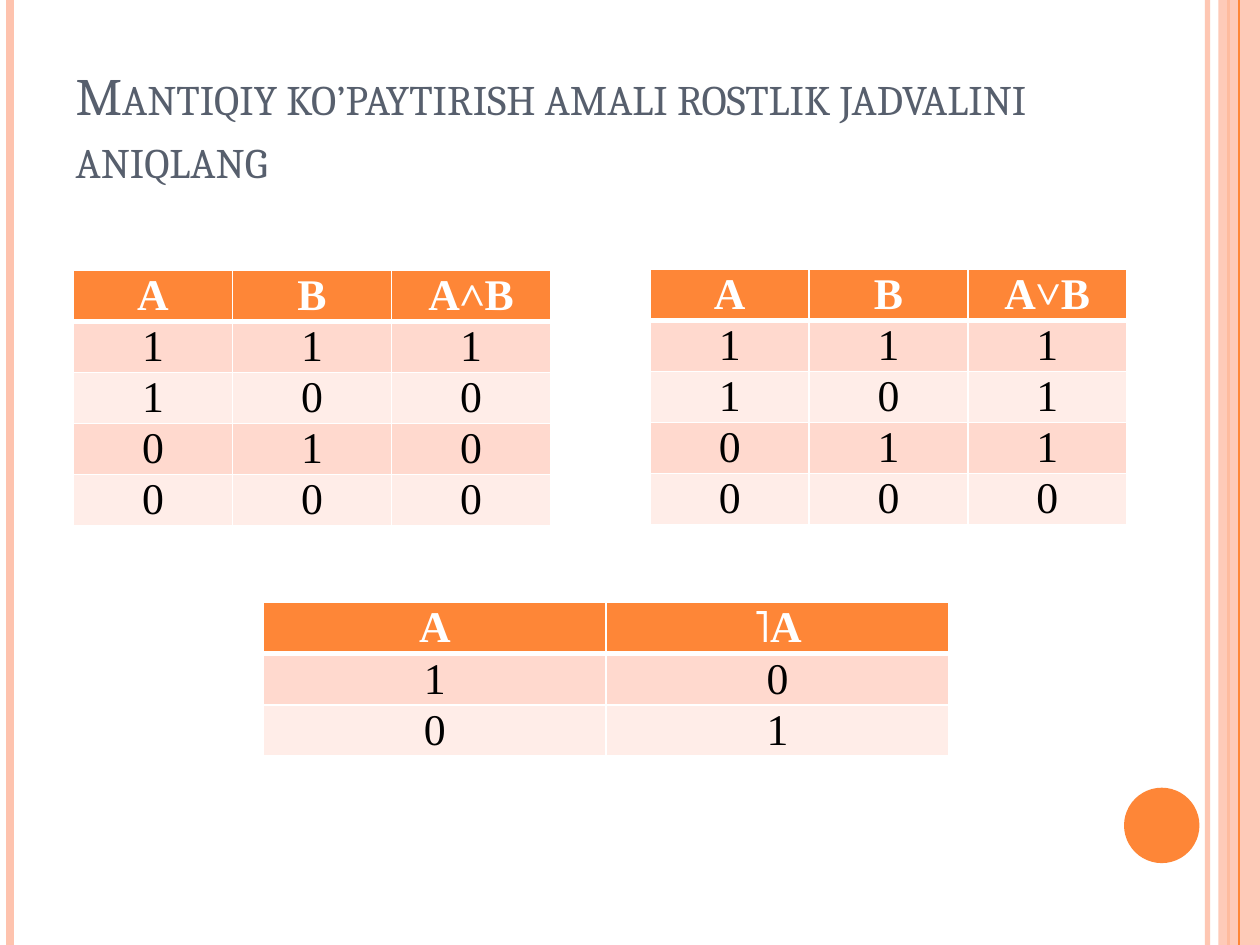
from lxml import etree
from pptx import Presentation
from pptx import util as u
from pptx.dml import color
from pptx.enum import shapes, text
from pptx.oxml import ns

ORANGE, PEACH, WHITE = "FE8637", "FEC3AE", "FFFFFF"
BANDS = ("FFD9CE", "FFEDE8")
ROW_HEIGHT = 1.03
SLIDE_WIDTH, SLIDE_HEIGHT = 25.4, 19.05


def paint(target, hex_color, opacity=100):
    """Give a fill or line format a solid colour with an opacity in percent."""
    fill = getattr(target, "fill", target)
    fill.solid()
    fill.fore_color.rgb = color.RGBColor.from_string(hex_color)
    if opacity < 100:
        for node in fill._xPr.iter(ns.qn("a:srgbClr")):
            etree.SubElement(node, ns.qn("a:alpha"), val=str(opacity * 1000))


def add_run(paragraph, words, font_name, size, hex_color, bold=False):
    """Append one formatted run to a paragraph and return it."""
    run = paragraph.add_run()
    run.text = words
    run.font.name, run.font.size, run.font.bold = font_name, u.Pt(size), bold
    paint(run.font, hex_color)
    return run


def add_bar(slide, x, width, hex_color, opacity=100):
    """Draw a full-height vertical line."""
    bar = slide.shapes.add_connector(
        shapes.MSO_CONNECTOR.STRAIGHT, u.Cm(x), 0, u.Cm(x), u.Cm(SLIDE_HEIGHT))
    bar.line.width = u.Pt(width)
    paint(bar.line, hex_color, opacity)
    etree.SubElement(bar._element.spPr, ns.qn("a:effectLst"))


def add_solid(slide, kind, box, hex_color, opacity=100):
    """Draw a borderless preset shape in a box."""
    shape = slide.shapes.add_shape(kind, *map(u.Cm, box))
    shape.shadow.inherit = False
    shape.line.fill.background()
    paint(shape, hex_color, opacity)


def add_decoration(slide):
    """Draw the side bars and the disc in the corner."""
    add_bar(slide, SLIDE_WIDTH - 1.06, 3, PEACH, 93)
    add_bar(slide, 0.21, 4.5, PEACH)
    add_bar(slide, SLIDE_WIDTH - 0.64, 1.5, ORANGE)
    add_solid(slide, shapes.MSO_SHAPE.RECTANGLE,
              (SLIDE_WIDTH - 0.84, 0, 0.84, SLIDE_HEIGHT), PEACH, 87)
    add_bar(slide, SLIDE_WIDTH - 0.42, 0.75, ORANGE)
    add_solid(slide, shapes.MSO_SHAPE.OVAL, (22.66, 15.88, 1.52, 1.52), ORANGE)


def set_title(slide, words, box):
    """Place the title placeholder in a box and write it in small capitals."""
    title = slide.shapes.title
    title.left, title.top, title.width, title.height = map(u.Cm, box)
    frame = title.text_frame
    frame.word_wrap = True
    frame.vertical_anchor = text.MSO_ANCHOR.BOTTOM
    paragraph = frame.paragraphs[0]
    paragraph.alignment = text.PP_ALIGN.LEFT
    run = add_run(paragraph, words, "Cambria", 30, "575F6D")
    run.font._element.set("cap", "small")


def set_borders(cell, top, bottom):
    """Give a cell white borders, with top and bottom widths in points."""
    properties = cell._tc.get_or_add_tcPr()
    for side, width in (("L", 1), ("R", 1), ("T", top), ("B", bottom)):
        line = etree.SubElement(properties, ns.qn(f"a:ln{side}"), w=str(u.Pt(width)))
        fill = etree.SubElement(line, ns.qn("a:solidFill"))
        etree.SubElement(fill, ns.qn("a:srgbClr"), val=WHITE)


def add_truth_table(slide, left, top, width, rows):
    """Draw a truth table with a header row and banded rows below it."""
    table = slide.shapes.add_table(
        len(rows), len(rows[0]), u.Cm(left), u.Cm(top),
        u.Cm(width), u.Cm(ROW_HEIGHT * len(rows))).table
    for row_index, values in enumerate(rows):
        header = row_index == 0
        table.rows[row_index].height = u.Cm(ROW_HEIGHT)
        for column_index, value in enumerate(values):
            cell = table.cell(row_index, column_index)
            cell.margin_left = cell.margin_right = u.Cm(0.18)
            cell.margin_top = cell.margin_bottom = 0
            cell.vertical_anchor = text.MSO_ANCHOR.MIDDLE
            set_borders(cell, 3 if row_index == 1 else 1, 3 if header else 1)
            paint(cell, ORANGE if header else BANDS[(row_index - 1) % 2])
            paragraph = cell.text_frame.paragraphs[0]
            paragraph.alignment = text.PP_ALIGN.CENTER
            add_run(paragraph, value, "Times New Roman", 25,
                    WHITE if header else "000000", header)


def main():
    """Build the slide and save it."""
    presentation = Presentation()
    presentation.slide_width = u.Cm(SLIDE_WIDTH)
    presentation.slide_height = u.Cm(SLIDE_HEIGHT)
    slide = presentation.slides.add_slide(presentation.slide_layouts[5])
    add_decoration(slide)
    set_title(slide, "Mantiqiy ko’paytirish amali rostlik jadvalini aniqlang",
              (1.27, 0.76, 20.75, 3.18))
    add_truth_table(slide, 1.48, 5.45, 9.62,
                    (("A", "B", "A˄B"), "111", "100", "010", "000"))
    add_truth_table(slide, 13.11, 5.43, 9.6,
                    (("A", "B", "A˅B"), "111", "101", "011", "000"))
    add_truth_table(slide, 5.31, 12.15, 13.82, (("A", "˥A"), "10", "01"))
    presentation.save("out.pptx")


if __name__ == "__main__":
    main()
